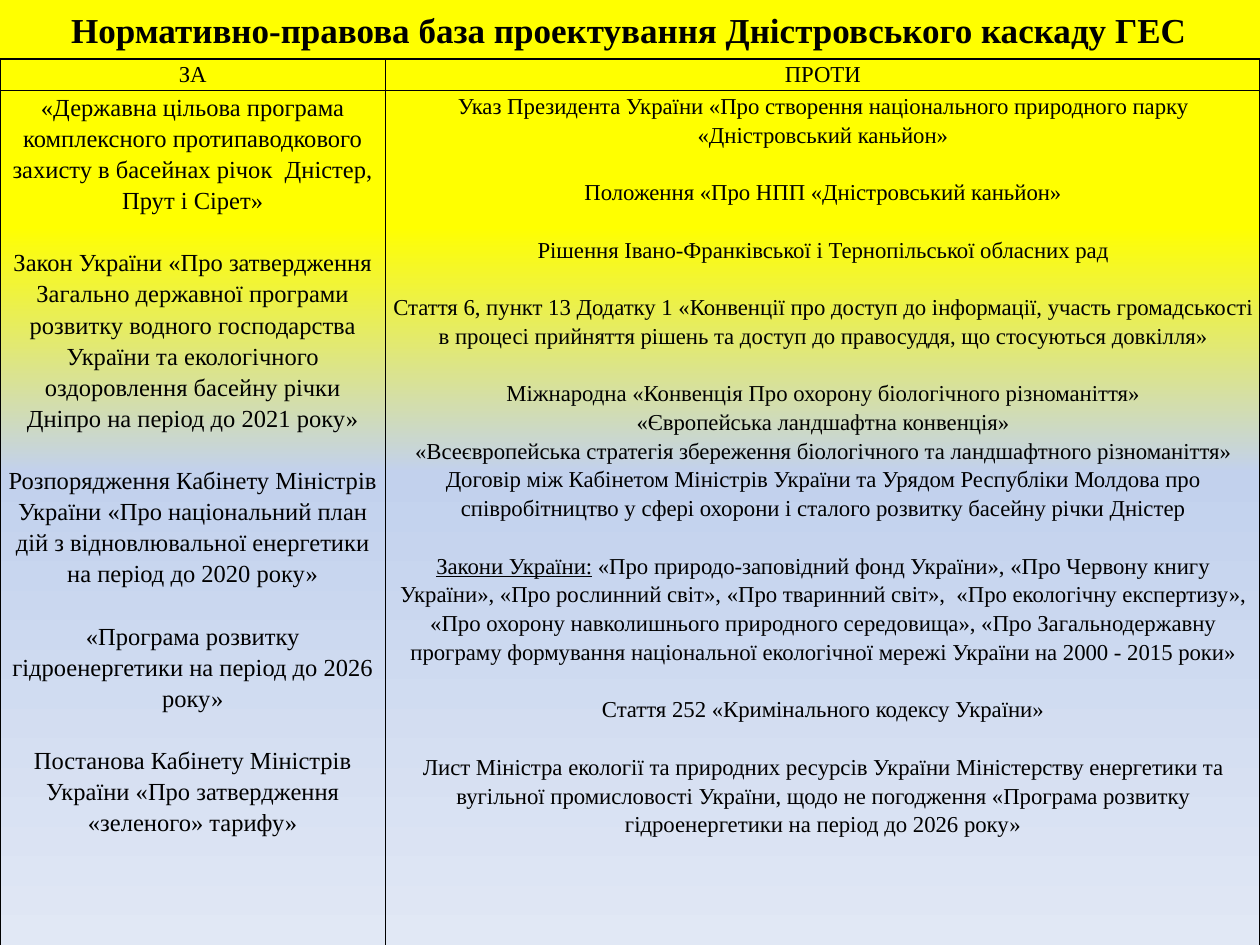
from copy import deepcopy

from lxml import etree
from pptx import Presentation
from pptx.dml.color import RGBColor
from pptx.enum.text import MSO_ANCHOR as ANCHOR, PP_ALIGN as ALIGN
from pptx.oxml.ns import qn
from pptx.util import Cm, Pt

FONT = "Times New Roman"
BLACK = "000000"
STOPS = [(24, "FFFF00"), (50, "C2D1ED"), (100, "E1E8F5")]
TITLE = "Нормативно-правова база проектування Дністровського каскаду ГЕС"

FOR_GROUPS = [
    ["«Державна цільова програма комплексного протипаводкового захисту в басейнах річок  Дністер, Прут і Сірет»"],
    ["Закон України «Про затвердження Загально державної програми розвитку водного господарства України "
     "та екологічного оздоровлення басейну річки Дніпро на період до 2021 року»"],
    ["Розпорядження Кабінету Міністрів України «Про національний план дій з відновлювальної енергетики "
     "на період до 2020 року»"],
    ["«Програма розвитку гідроенергетики на період до 2026 року»"],
    ["Постанова Кабінету Міністрів України «Про затвердження «зеленого» тарифу»"],
]
LAWS_LABEL = "Закони України:"
AGAINST_GROUPS = [
    ["Указ Президента України «Про створення національного природного парку «Дністровський каньйон»"],
    ["Положення «Про НПП «Дністровський каньйон»"],
    ["Рішення Івано-Франківської і Тернопільської обласних рад"],
    ["Стаття 6, пункт 13 Додатку 1 «Конвенції про доступ до інформації, участь громадськості в процесі "
     "прийняття рішень та доступ до правосуддя, що стосуються довкілля»"],
    ["Міжнародна «Конвенція Про охорону біологічного різноманіття»",
     "«Європейська ландшафтна конвенція»",
     "«Всеєвропейська стратегія збереження біологічного та ландшафтного різноманіття»",
     "Договір між Кабінетом Міністрів України та Урядом Республіки Молдова про співробітництво у сфері "
     "охорони і сталого розвитку басейну річки Дністер"],
    [LAWS_LABEL + " «Про природо-заповідний фонд України», «Про Червону книгу України», «Про рослинний світ», "
     "«Про тваринний світ»,  «Про екологічну експертизу», «Про охорону навколишнього природного середовища», "
     "«Про Загальнодержавну програму формування національної екологічної мережі України на 2000 - 2015 роки»"],
    ["Стаття 252 «Кримінального кодексу України»"],
    ["Лист Міністра екології та природних ресурсів України Міністерству енергетики та вугільної промисловості "
     "України, щодо не погодження «Програма розвитку гідроенергетики на період до 2026 року»"],
]


def rgb(value):
    return RGBColor.from_string(value)


def add_text(p, text, size=13, color=BLACK, bold=False, underline=False, spacing=1.15, before=0):
    p.alignment = ALIGN.CENTER
    p.line_spacing = spacing
    p.space_before = Pt(before)
    r = p.add_run()
    r.text = text
    r.font.name = FONT
    r.font.size = Pt(size)
    r.font.bold = bold
    r.font.underline = underline
    r.font.color.rgb = rgb(color)


def set_background(slide):
    fill = slide.background.fill
    fill.gradient()
    fill.gradient_angle = 270
    stop_list = fill._fill._gradFill.find(qn("a:gsLst"))
    stop_list.append(deepcopy(stop_list[-1]))
    for stop, (position, color) in zip(fill.gradient_stops, STOPS):
        stop.position = position / 100
        stop.color.rgb = rgb(color)


def add_title(slide):
    box = slide.shapes.add_textbox(Cm(0.58), Cm(0), Cm(24.2), Cm(1.2))
    tf = box.text_frame
    tf.word_wrap = True
    tf.vertical_anchor = ANCHOR.MIDDLE
    tf.margin_top = tf.margin_bottom = 0
    add_text(tf.paragraphs[0], TITLE, size=20, bold=True, spacing=1)


def style_cell(cell):
    cell.margin_left = cell.margin_right = Cm(0.1)
    cell.margin_top = cell.margin_bottom = 0
    props = cell._tc.get_or_add_tcPr()
    for side in ("lnL", "lnR", "lnT", "lnB"):
        line = etree.SubElement(props, qn(f"a:{side}"), w=str(Pt(1)))
        fill = etree.SubElement(line, qn("a:solidFill"))
        etree.SubElement(fill, qn("a:srgbClr"), val=BLACK)
    cell.fill.background()


def fill_cell(cell, groups, size=13, gap=0):
    tf = cell.text_frame
    p = tf.paragraphs[0]
    for i, group in enumerate(groups):
        for j, text in enumerate(group):
            if i or j:
                p = tf.add_paragraph()
            before = gap if i and not j else 0
            if text.startswith(LAWS_LABEL):
                add_text(p, LAWS_LABEL, size=size, underline=True, before=before)
                text = text.removeprefix(LAWS_LABEL)
            add_text(p, text, size=size, before=before)


def add_law_table(slide):
    frame = slide.shapes.add_table(2, 2, Cm(0), Cm(1.19), Cm(25.4), Cm(17.98))
    table = frame.table
    table.first_row = table.horz_banding = False
    for column, width in zip(table.columns, (7.77, 17.63)):
        column.width = Cm(width)
    for row, height in zip(table.rows, (0.51, 17.35)):
        row.height = Cm(height)
    for cell in table.iter_cells():
        style_cell(cell)
    fill_cell(table.cell(0, 0), [["ЗА"]])
    fill_cell(table.cell(0, 1), [["ПРОТИ"]])
    fill_cell(table.cell(1, 0), FOR_GROUPS, size=14, gap=17.8)
    fill_cell(table.cell(1, 1), AGAINST_GROUPS, gap=16.45)


def main():
    prs = Presentation()
    prs.slide_width, prs.slide_height = Cm(25.4), Cm(19.05)
    slide = prs.slides.add_slide(prs.slide_layouts[6])
    set_background(slide)
    add_title(slide)
    add_law_table(slide)
    prs.save("out.pptx")


if __name__ == "__main__":
    main()
